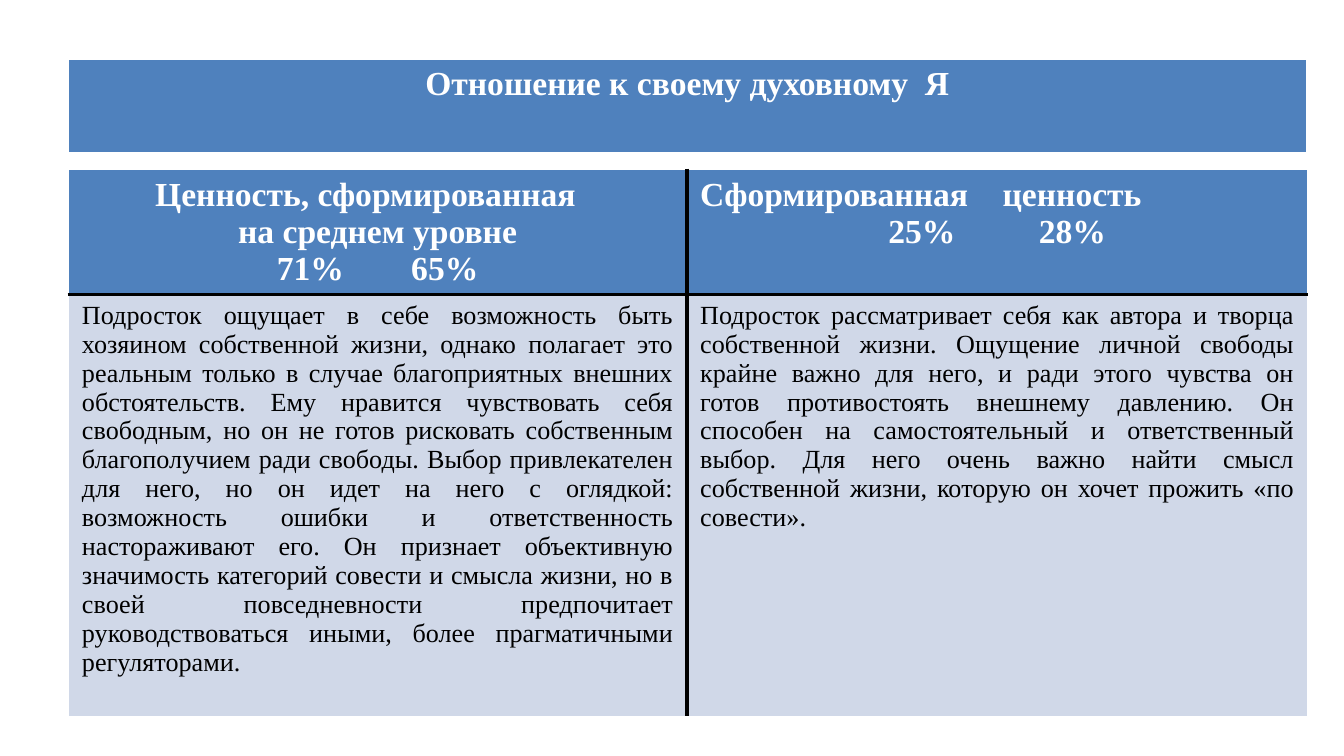
import pptx
import pptx.dml.color
import pptx.enum.text
import pptx.oxml.ns
import pptx.util
from lxml import etree

Inches = pptx.util.Inches
Pt = pptx.util.Pt
Align = pptx.enum.text.PP_ALIGN
RGBColor = pptx.dml.color.RGBColor

WHITE = RGBColor(0xFF, 0xFF, 0xFF)
BLACK = RGBColor(0x00, 0x00, 0x00)
BLUE = RGBColor(0x4F, 0x81, 0xBD)
PALE = RGBColor(0xD0, 0xD8, 0xE8)

LEFT, WIDTH = 0.51, 9.21
THIN, HEAVY, TITLE_RULE = (WHITE, 1), (BLACK, 2.25), (WHITE, 3)

AVERAGE_TEXT = (
    "Подросток ощущает в себе возможность быть хозяином собственной жизни, "
    "однако полагает это реальным только в случае благоприятных внешних "
    "обстоятельств. Ему нравится чувствовать себя свободным, но он не готов "
    "рисковать собственным благополучием ради свободы. Выбор привлекателен "
    "для него, но он идет на него с оглядкой: возможность ошибки и "
    "ответственность настораживают его. Он признает объективную значимость "
    "категорий совести и смысла жизни, но в своей повседневности предпочитает "
    "руководствоваться иными, более прагматичными регуляторами."
)
FORMED_TEXT = (
    "Подросток рассматривает себя как автора и творца собственной жизни. "
    "Ощущение личной свободы крайне важно для него, и ради этого чувства он "
    "готов противостоять внешнему давлению. Он способен на самостоятельный и "
    "ответственный выбор. Для него очень важно найти смысл собственной жизни, "
    "которую он хочет прожить «по совести»."
)


class Slide:
    """Holds the text style and the current page, and adds tables to it."""

    font = "Times New Roman"

    def __init__(self, deck):
        self.page = deck.slides.add_slide(deck.slide_layouts[6])

    def table(self, top, columns, rows):
        frame = self.page.shapes.add_table(
            len(rows), len(columns), Inches(LEFT), Inches(top),
            Inches(WIDTH), Inches(sum(rows)))
        for column, width in zip(frame.table.columns, columns):
            column.width = Inches(width)
        for row, height in zip(frame.table.rows, rows):
            row.height = Inches(height)
        return frame.table

    def cell(self, cell, fill, left=THIN, right=THIN, top=THIN, bottom=THIN):
        properties = cell._tc.get_or_add_tcPr()
        for side, (color, width) in zip("LRTB", (left, right, top, bottom)):
            line = etree.SubElement(
                properties, pptx.oxml.ns.qn(f"a:ln{side}"), w=str(Pt(width)))
            solid = etree.SubElement(line, pptx.oxml.ns.qn("a:solidFill"))
            etree.SubElement(solid, pptx.oxml.ns.qn("a:srgbClr"), val=str(color))
        cell.fill.solid()
        cell.fill.fore_color.rgb = fill

    def text(self, cell, lines, size, color, bold):
        for number, (words, align, tabs, indent) in enumerate(lines):
            box = cell.text_frame
            para = box.add_paragraph() if number else box.paragraphs[0]
            para.alignment = align
            properties = para._p.get_or_add_pPr()
            properties.set("marR", str(Inches(indent)))
            if tabs:
                stops = etree.SubElement(properties, pptx.oxml.ns.qn("a:tabLst"))
                for stop in tabs:
                    etree.SubElement(stops, pptx.oxml.ns.qn("a:tab"),
                                     pos=str(Inches(stop)), algn="l")
            span = para.add_run()
            span.text = words
            span.font.name = self.font
            span.font.size = Pt(size)
            span.font.bold = bold
            span.font.color.rgb = color

    def heading(self, cell, *lines):
        self.text(cell, lines, 18, WHITE, True)

    def body(self, cell, words):
        self.text(cell, [(words, Align.JUSTIFY, (), 0)], 14, BLACK, False)


def main():
    deck = pptx.Presentation()
    deck.slide_width = Inches(10)
    deck.slide_height = deck.slide_width * 9 // 16
    slide = Slide(deck)

    values = slide.table(1.26, [4.6, 4.62], [0.93, 3.14])
    for row, fill in enumerate((BLUE, PALE)):
        level = {"top": HEAVY} if row else {"bottom": HEAVY}
        slide.cell(values.cell(row, 0), fill, right=HEAVY, **level)
        slide.cell(values.cell(row, 1), fill, left=HEAVY, **level)
    slide.heading(
        values.cell(0, 0),
        ("Ценность, сформированная", Align.CENTER, (), 0.18),
        ("на среднем уровне", Align.CENTER, (), 0),
        ("\t71%\t65%", Align.LEFT, (1.45, 2.45), 0))
    slide.heading(
        values.cell(0, 1),
        ("Сформированная\tценность", Align.LEFT, (2.25,), 0),
        ("\t25%\t28%", Align.LEFT, (1.4, 2.52), 0))
    slide.body(values.cell(1, 0), AVERAGE_TEXT)
    slide.body(values.cell(1, 1), FORMED_TEXT)

    title = slide.table(0.44, [WIDTH], [0.71]).cell(0, 0)
    slide.cell(title, BLUE, bottom=TITLE_RULE)
    slide.heading(title, ("Отношение к своему духовному  Я", Align.CENTER, (), 0))

    deck.save("out.pptx")


if __name__ == "__main__":
    main()
